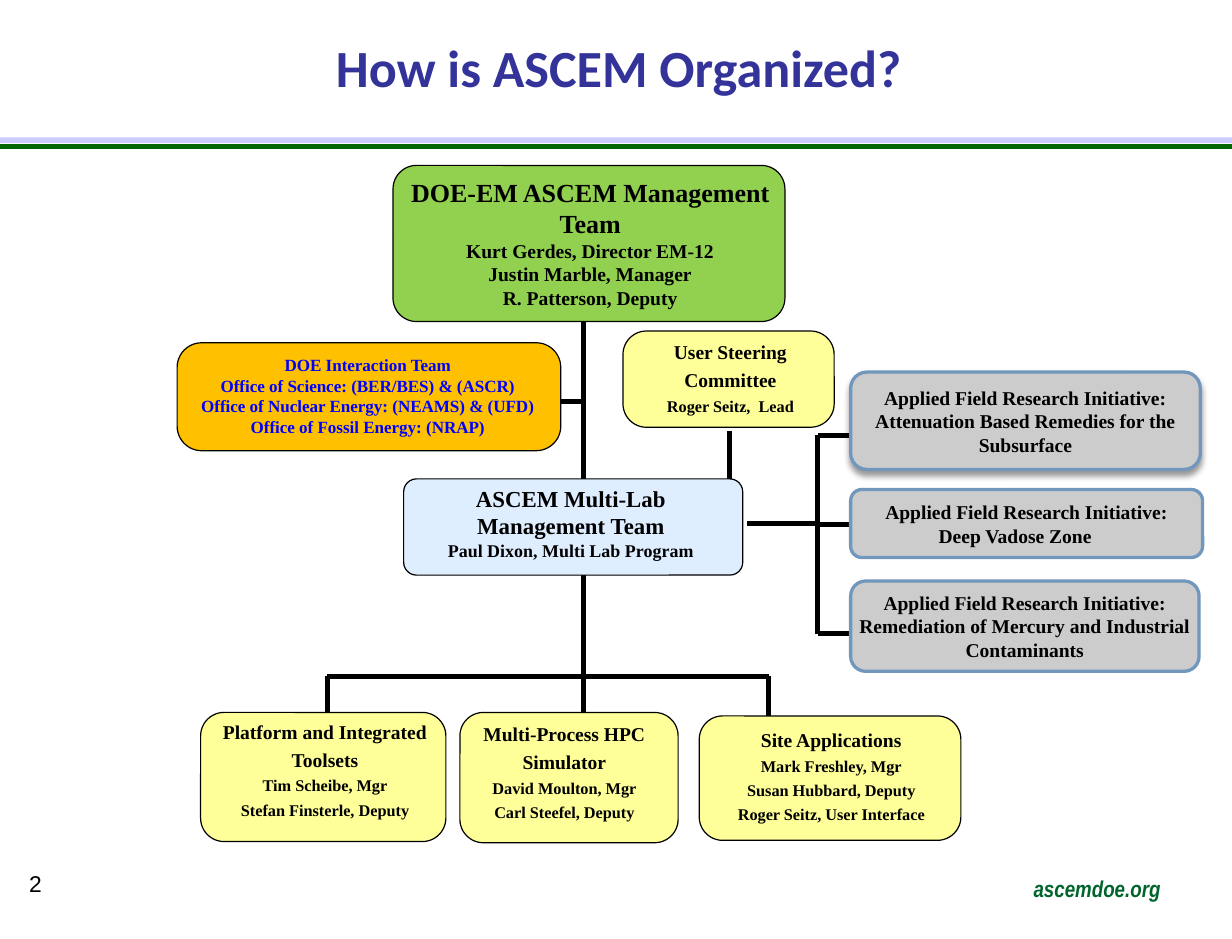
from dataclasses import dataclass

from lxml import etree
from pptx import Presentation
from pptx.dml.color import RGBColor
from pptx.enum.shapes import MSO_CONNECTOR, MSO_SHAPE
from pptx.enum.text import MSO_ANCHOR, PP_ALIGN
from pptx.oxml import parse_xml
from pptx.oxml.ns import nsdecls, qn
from pptx.util import Inches, Pt

STRAIGHT = MSO_CONNECTOR.STRAIGHT
RECTANGLE = MSO_SHAPE.RECTANGLE
ROUNDED = MSO_SHAPE.ROUNDED_RECTANGLE
INITIATIVE = MSO_SHAPE.FLOWCHART_ALTERNATE_PROCESS
TOP, MIDDLE = MSO_ANCHOR.TOP, MSO_ANCHOR.MIDDLE
CENTER, LEFT = PP_ALIGN.CENTER, PP_ALIGN.LEFT

COLUMNS, ROWS = 105, 80
CELL = Inches(0.1)


@dataclass(frozen=True)
class Theme:
    title: str = "333399"
    site: str = "00642D"
    rule: str = "006600"
    band: str = "CCCCFF"
    ink: str = "000000"
    link_text: str = "0000FF"
    sponsor: str = "92D050"
    interaction: str = "FFC000"
    management: str = "DFEEFF"
    team: str = "FFFF99"
    initiative: str = "CCCCCC"
    initiative_edge: str = "7197BD"
    serif: str = "Times New Roman"
    title_size: float = 32
    sponsor_size: float = 16
    management_size: float = 14
    heading_size: float = 12
    lead_size: float = 11
    interaction_size: float = 10.5
    name_size: float = 10
    line_width: float = 3
    edge_width: float = 2


THEME = Theme()


def grid(*cells):
    return [round(cell * CELL) for cell in cells]


def color(value):
    return RGBColor.from_string(value)


def write(shape, lines, ink=THEME.ink, font=THEME.serif, align=CENTER,
          anchor=TOP, margins=(0, 0), space=0, bold=True, italic=False):
    text_frame = shape.text_frame
    text_frame.word_wrap = True
    text_frame.vertical_anchor = anchor
    side, end = grid(*margins)
    text_frame.margin_left = text_frame.margin_right = side
    text_frame.margin_top = text_frame.margin_bottom = end
    text_frame.text = "\n".join(text for text, size in lines)
    for index, (paragraph, (text, size)) in enumerate(zip(text_frame.paragraphs, lines)):
        paragraph.alignment = align
        paragraph.space_before = Pt(space if index else 0)
        for run in paragraph.runs:
            run.font.name = font
            run.font.size = Pt(size)
            run.font.bold = bold
            run.font.italic = italic
            run.font.color.rgb = color(ink)


def add_box(shapes, kind, area, fill, edge=None, width=0):
    shape = shapes.add_shape(kind, *grid(*area))
    shape.shadow.inherit = False
    shape.fill.solid()
    shape.fill.fore_color.rgb = color(fill)
    if edge:
        shape.line.color.rgb = color(edge)
        shape.line.width = Pt(width)
    else:
        shape.line.fill.background()
    return shape


def add_label(shapes, area, lines, **style):
    write(shapes.add_textbox(*grid(*area)), lines, **style)


def add_line(slide, start, end, ink=THEME.ink):
    connector = slide.shapes.add_connector(STRAIGHT, *grid(*start, *end))
    connector.line.color.rgb = color(ink)
    connector.line.width = Pt(THEME.line_width)
    etree.SubElement(connector._element.spPr, qn("a:effectLst"))


def add_card(slide, area, radius, fill, label_area, lines, **style):
    shapes = slide.shapes.add_group_shape().shapes
    card = add_box(shapes, ROUNDED, area, fill, THEME.ink)
    card.adjustments[0] = radius / min(area[2:])
    add_label(shapes, label_area, lines, **style)


def add_initiative(slide, area, topic, shadow=False):
    shape = add_box(slide.shapes, INITIATIVE, area, THEME.initiative,
                    THEME.initiative_edge, THEME.edge_width)
    lines = [("Applied Field Research Initiative:", THEME.heading_size),
             (topic, THEME.heading_size)]
    write(shape, lines, anchor=MIDDLE, margins=(0.1, 0.5))
    if shadow:
        effects = shape._element.spPr.find(qn("a:effectLst"))
        effects.append(parse_xml(
            f'<a:outerShdw {nsdecls("a")} blurRad="{Pt(4)}" dist="{Pt(3)}" dir="5400000">'
            f'<a:srgbClr val="{THEME.ink}"><a:alpha val="40000"/></a:srgbClr></a:outerShdw>'))


def add_frame(slide):
    add_line(slide, (0, 12.5), (COLUMNS, 12.5), THEME.rule)
    add_box(slide.shapes, RECTANGLE, (0, 11.7, COLUMNS, 0.5), THEME.band)
    add_label(slide.shapes, (5.5, 2, 94.5, 7.4),
              [("How is ASCEM Organized?", THEME.title_size)],
              ink=THEME.title, font="Calibri", anchor=MIDDLE, margins=(1, 0.5))
    add_label(slide.shapes, (87.1, 74, 12.9, 3.4), [("ascemdoe.org", 14)],
              ink=THEME.site, font="Arial Narrow", align=LEFT,
              margins=(1, 0.5), italic=True)
    add_label(slide.shapes, (1.5, 73.6, 4, 3.4), [("2", 14)],
              font="Arial", align=LEFT, margins=(1, 0.5), bold=False)


def add_links(slide):
    trunk, bus, branch = 49.7, 69.7, 57.6
    add_line(slide, (46.4, 34.2), (trunk, 34.2))
    add_line(slide, (trunk, 26.7), (trunk, 42.7))
    add_line(slide, (trunk, 48.7), (trunk, 60.7))
    add_line(slide, (27.9, branch), (65.5, branch))
    for column in (27.9, 65.5):
        add_line(slide, (column, branch), (column, 61.2))
    add_line(slide, (62.2, 36.7), (62.2, 40.8))
    add_line(slide, (63.7, 44.6), (bus, 44.6))
    add_line(slide, (bus, 37.1), (bus, 54))
    for row in (37.1, 44.7, 54):
        add_line(slide, (bus, row), (72.8, row))


def add_management(slide):
    add_card(slide, (34.4, 40.8, 28.9, 8.2), 1.1, THEME.management,
             (34.2, 41.3, 28.9, 6.6),
             [("ASCEM Multi-Lab", THEME.management_size),
              ("Management Team", THEME.management_size),
              ("Paul Dixon, Multi Lab Program", THEME.lead_size)])
    add_card(slide, (33.5, 14.1, 33.4, 13.3), 2, THEME.sponsor,
             (34.9, 15, 30.8, 11.4),
             [("DOE-EM ASCEM Management Team", THEME.sponsor_size),
              ("Kurt Gerdes, Director EM-12", THEME.heading_size),
              ("Justin Marble, Manager", THEME.heading_size),
              ("R. Patterson, Deputy", THEME.heading_size)])
    offices = ["DOE Interaction Team",
               "Office of Science: (BER/BES) & (ASCR)",
               "Office of Nuclear Energy: (NEAMS) & (UFD)",
               "Office of Fossil Energy: (NRAP)"]
    add_card(slide, (15.1, 29.2, 32.7, 9.2), 2.1, THEME.interaction,
             (15.7, 30.2, 31.3, 7.1),
             [(office, THEME.interaction_size) for office in offices],
             ink=THEME.link_text)


def add_team(slide, area, label_area, headings, names):
    lines = [(heading, THEME.heading_size) for heading in headings]
    lines += [(name, THEME.name_size) for name in names]
    add_card(slide, area, 2, THEME.team, label_area, lines, space=2.8)


def main():
    presentation = Presentation()
    presentation.slide_width, presentation.slide_height = grid(COLUMNS, ROWS)
    slide = presentation.slides.add_slide(presentation.slide_layouts[6])
    add_frame(slide)
    add_links(slide)
    add_management(slide)
    add_team(slide, (17.1, 60.7, 20.9, 11), (18.2, 61.3, 19, 8.8),
             ["Platform and Integrated", "Toolsets"],
             ["Tim Scheibe, Mgr", "Stefan Finsterle, Deputy"])
    add_team(slide, (39.2, 60.7, 18.6, 11.1), (39.7, 61.5, 16.8, 8.7),
             ["Multi-Process HPC", "Simulator"],
             ["David Moulton, Mgr", "Carl Steefel, Deputy"])
    add_team(slide, (59.6, 61, 22.3, 10.6), (62, 62, 17.7, 8.3),
             ["Site Applications"],
             ["Mark Freshley, Mgr", "Susan Hubbard, Deputy", "Roger Seitz, User Interface"])
    add_team(slide, (53.1, 28.2, 18, 8.2), (56.3, 29, 11.9, 6.5),
             ["User Steering", "Committee"], ["Roger Seitz,  Lead"])
    add_initiative(slide, (72.5, 31.7, 29.8, 8.3),
                   "Attenuation Based Remedies for the Subsurface", shadow=True)
    add_initiative(slide, (72.5, 41.7, 30, 5.8), "Deep Vadose Zone\t")
    add_initiative(slide, (72.5, 49.5, 29.7, 7.7),
                   "Remediation of Mercury and Industrial Contaminants")
    presentation.save("out.pptx")


if __name__ == "__main__":
    main()
